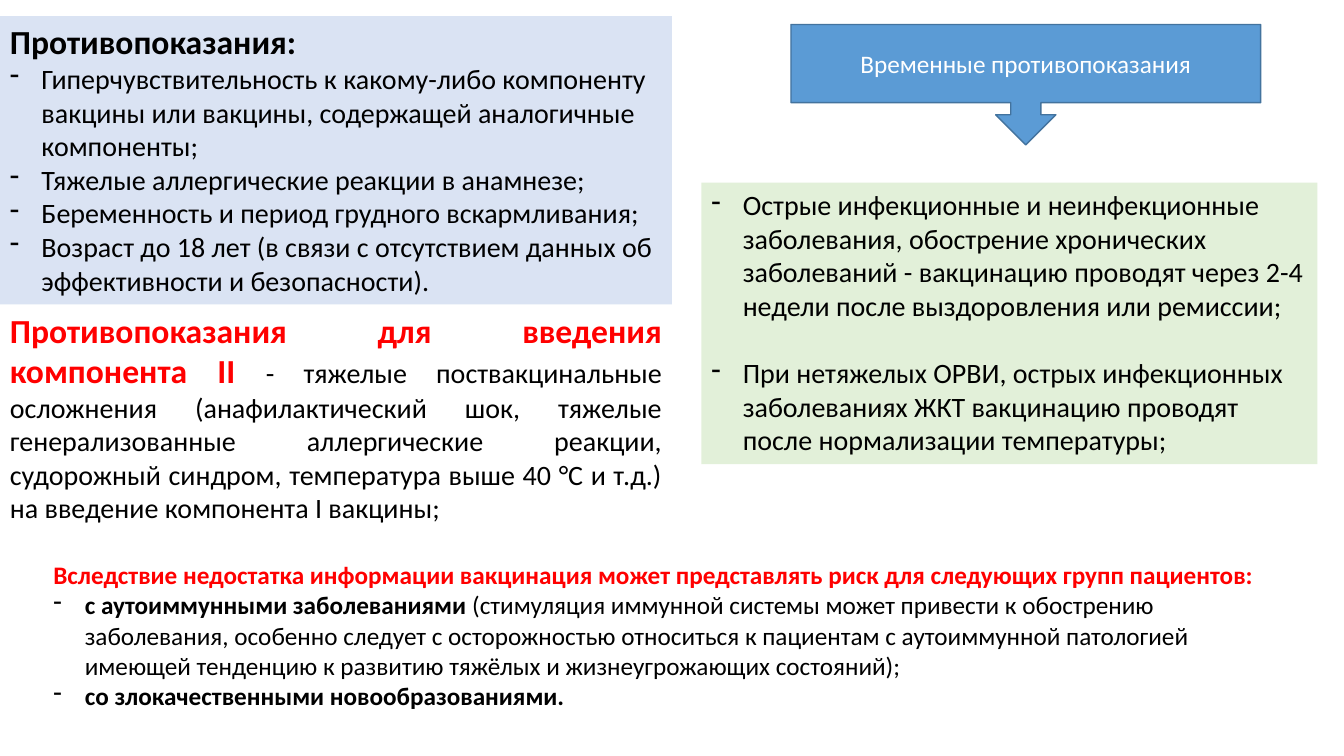
import pptx
import pptx.dml.color
import pptx.enum.shapes
import pptx.enum.text
import pptx.oxml
import pptx.oxml.ns
import pptx.util

Pt = pptx.util.Pt
ALIGN = pptx.enum.text.PP_ALIGN
ANCHOR = pptx.enum.text.MSO_ANCHOR
SHAPE = pptx.enum.shapes.MSO_SHAPE

BLACK, RED, WHITE = "000000", "FF0000", "FFFFFF"


def rgb(value):
    return pptx.dml.color.RGBColor.from_string(value)


def apply(obj, values):
    for name, value in values.items():
        setattr(obj, name, value)


class SlideBuilder:
    font = "Calibri"
    hang = 22.5

    def __init__(self, prs):
        self.s = prs.slides.add_slide(prs.slide_layouts[6])

    def shape(self, kind, box, fill, paragraphs, line=None, anchor=ANCHOR.TOP):
        sp = self.s.shapes.add_shape(kind, *map(Pt, box))
        sp.shadow.inherit = False
        sp.fill.solid()
        sp.fill.fore_color.rgb = rgb(fill)
        if line:
            sp.line.color.rgb = rgb(line)
            sp.line.width = Pt(1)
        else:
            sp.line.fill.background()
        self.fill_text(sp.text_frame, paragraphs, anchor)

    def text(self, box, paragraphs):
        sp = self.s.shapes.add_textbox(*map(Pt, box))
        self.fill_text(sp.text_frame, paragraphs, ANCHOR.TOP)

    def fill_text(self, tf, paragraphs, anchor):
        apply(tf, {"word_wrap": True, "vertical_anchor": anchor})
        for i, content in enumerate(paragraphs):
            p = tf.add_paragraph() if i else tf.paragraphs[0]
            apply(p, {"alignment": ALIGN.LEFT, **content["format"]})
            if content["dash"]:
                self.dash(p)
            for text, size, color, bold in content["runs"]:
                r = p.add_run()
                r.text = text
                apply(r.font, {"name": self.font, "size": Pt(size), "bold": bold})
                r.font.color.rgb = rgb(color)

    def dash(self, p):
        """Give the paragraph a hanging dash bullet."""
        pPr = p._p.get_or_add_pPr()
        pPr.set("marL", str(Pt(self.hang)))
        pPr.set("indent", str(-Pt(self.hang)))
        ns = pptx.oxml.ns.nsdecls("a")
        for tag in ("buFontTx", "buChar"):
            pPr.append(pptx.oxml.parse_xml(f"<a:{tag} {ns}/>"))
        pPr[-1].set("char", "-")


def para(*runs, dash=False, **values):
    return {"runs": runs, "dash": dash, "format": values}


def item(*runs, **values):
    return para(*runs, dash=True, **values)


def main():
    prs = pptx.Presentation()
    apply(prs, {"slide_width": Pt(960), "slide_height": Pt(540)})
    slide = SlideBuilder(prs)

    general = [
        "Гиперчувствительность к какому-либо компоненту вакцины или вакцины, "
        "содержащей аналогичные компоненты;",
        "Тяжелые аллергические реакции в анамнезе;",
        "Беременность и период грудного вскармливания;",
        "Возраст до 18 лет (в связи с отсутствием данных об эффективности и безопасности).",
    ]
    slide.shape(SHAPE.RECTANGLE, (0, 11.5, 480, 206), "DAE3F3",
                [para(("Противопоказания:", 24, BLACK, True))]
                + [item((text, 20, BLACK, False)) for text in general])

    slide.shape(SHAPE.RECTANGLE, (501, 130.5, 440, 201), "E2F0D9", [
        item(("Острые инфекционные и неинфекционные заболевания, обострение хронических "
              "заболеваний - вакцинацию проводят через 2-4 недели после выздоровления "
              "или ремиссии;", 20, BLACK, False)),
        item(("При нетяжелых ОРВИ, острых инфекционных заболеваниях ЖКТ вакцинацию "
              "проводят после нормализации температуры;", 20, BLACK, False),
             space_before=Pt(24)),
    ])

    slide.text((0, 217.5, 480, 163), [
        para(("Противопоказания для введения компонента II ", 24, RED, True),
             ("- тяжелые поствакцинальные осложнения (анафилактический шок, тяжелые "
              "генерализованные аллергические реакции, судорожный синдром, температура "
              "выше 40 °C и т.д.) на введение компонента I вакцины;", 20, BLACK, False),
             alignment=ALIGN.JUSTIFY),
    ])

    slide.shape(SHAPE.DOWN_ARROW_CALLOUT, (565, 17.5, 335.5, 86), "5B9BD5",
                [para(("Временные противопоказания", 18, WHITE, False),
                      alignment=ALIGN.CENTER)],
                line="43739E", anchor=ANCHOR.MIDDLE)

    slide.text((31, 396, 882, 116.5), [
        para(("Вследствие недостатка информации вакцинация может представлять риск "
              "для следующих групп пациентов:", 18, RED, True)),
        item(("с аутоиммунными заболеваниями ", 18, BLACK, True),
             ("(стимуляция иммунной системы может привести к обострению заболевания, "
              "особенно следует с осторожностью относиться к пациентам с аутоиммунной "
              "патологией имеющей тенденцию к развитию тяжёлых и жизнеугрожающих "
              "состояний);", 18, BLACK, False)),
        item(("со злокачественными новообразованиями.", 18, BLACK, True)),
    ])

    prs.save("out.pptx")


if __name__ == "__main__":
    main()
